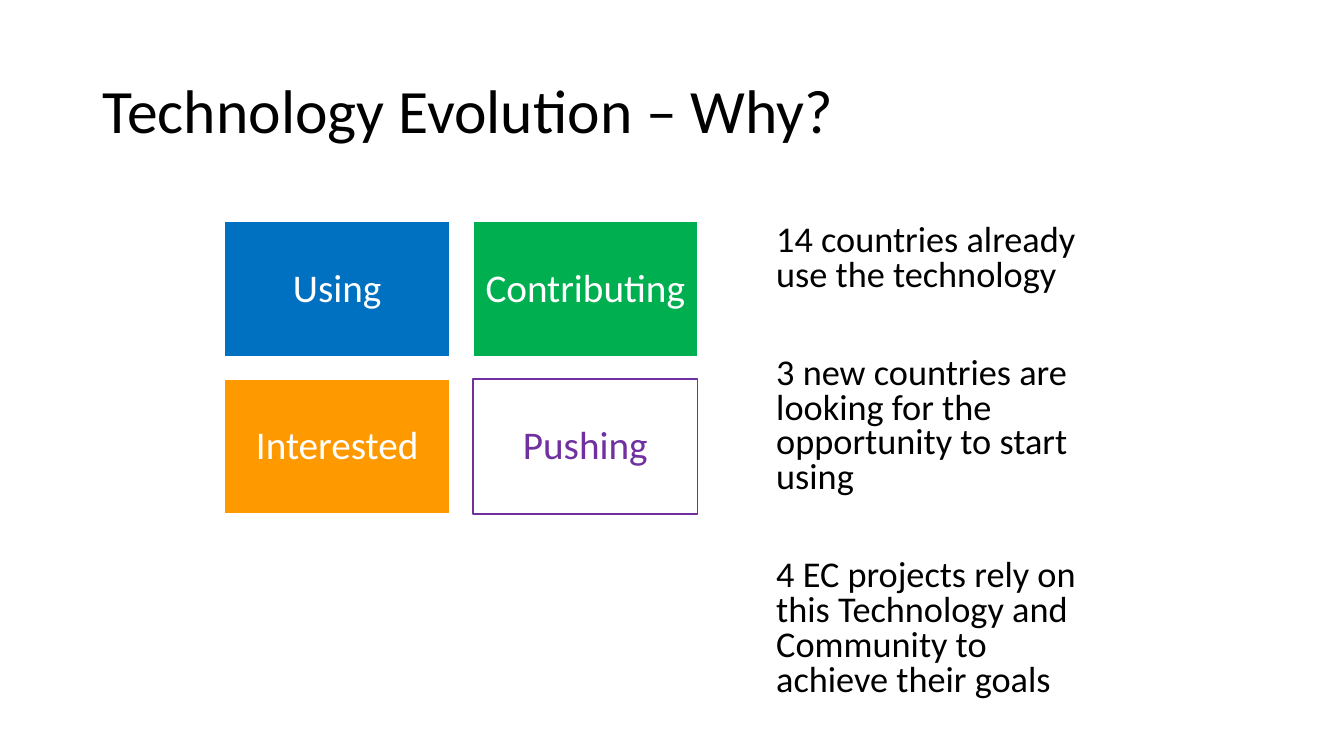
import dataclasses

import pptx
import pptx.dml.color
import pptx.enum.shapes
import pptx.enum.text
import pptx.util

SLIDE_W, SLIDE_H = 13.33, 7.5
FONT = "Calibri"

# Grid of tiles, in inches
GRID_LEFT, GRID_TOP = 2.23, 2.2
TILE_W, TILE_H = 2.23, 1.34
COL_STEP, ROW_STEP = 2.46, 1.56


@dataclasses.dataclass
class Tile:
    label: str
    col: int
    row: int
    fill: str
    accent: str = "FFFFFF"  # outline and label


TILES = [
    Tile("Using", 0, 0, "0070C0"),
    Tile("Contributing", 1, 0, "00B050"),
    Tile("Interested", 0, 1, "FF9900"),
    Tile("Pushing", 1, 1, "FFFFFF", "7030A0"),
]

REASONS = [
    "14 countries already use the technology",
    "3 new countries are looking for the opportunity to start using",
    "4 EC projects rely on this Technology and Community to achieve their goals",
]


def rgb(value: str) -> pptx.dml.color.RGBColor:
    return pptx.dml.color.RGBColor.from_string(value)


def style(p, size: float, color: str, spacing: float) -> None:
    p.font.name = FONT
    p.font.size = pptx.util.Pt(size)
    p.font.color.rgb = rgb(color)
    p.line_spacing = spacing


def add_text(s, box: tuple, lines: list[str], size: float, spacing: float,
             anchor, gap: float = 0) -> None:
    sp = s.shapes.add_textbox(*(pptx.util.Inches(v) for v in box))
    tf = sp.text_frame
    tf.word_wrap = True
    tf.vertical_anchor = anchor
    for i, line in enumerate(lines):
        p = tf.add_paragraph() if i else tf.paragraphs[0]
        p.text = line
        style(p, size, "000000", spacing)
        p.space_before = pptx.util.Pt(gap if i else 0)


def add_tile(s, tile: Tile) -> None:
    box = (GRID_LEFT + tile.col * COL_STEP, GRID_TOP + tile.row * ROW_STEP, TILE_W, TILE_H)
    sp = s.shapes.add_shape(pptx.enum.shapes.MSO_SHAPE.RECTANGLE,
                            *(pptx.util.Inches(v) for v in box))
    sp.shadow.inherit = False
    sp.fill.solid()
    sp.fill.fore_color.rgb = rgb(tile.fill)
    sp.line.color.rgb = rgb(tile.accent)
    sp.line.width = pptx.util.Pt(1)
    tf = sp.text_frame
    tf.word_wrap = True
    tf.vertical_anchor = pptx.enum.text.MSO_ANCHOR.MIDDLE
    p = tf.paragraphs[0]
    p.text = tile.label
    p.alignment = pptx.enum.text.PP_ALIGN.CENTER
    style(p, 28, tile.accent, 0.9)


def main() -> None:
    prs = pptx.Presentation()
    prs.slide_width = pptx.util.Inches(SLIDE_W)
    prs.slide_height = pptx.util.Inches(SLIDE_H)
    s = prs.slides.add_slide(prs.slide_layouts[6])

    # Title
    add_text(s, (0.92, 0.4, 11.5, 1.45), ["Technology Evolution – Why?"], 44, 0.9,
             pptx.enum.text.MSO_ANCHOR.MIDDLE)

    # Reasons on the right
    add_text(s, (7.6, 2.18, 3.35, 5.16), REASONS, 25.9, 0.8,
             pptx.enum.text.MSO_ANCHOR.TOP, gap=45)

    # Coloured tiles
    for tile in TILES:
        add_tile(s, tile)

    prs.save("out.pptx")


if __name__ == "__main__":
    main()
